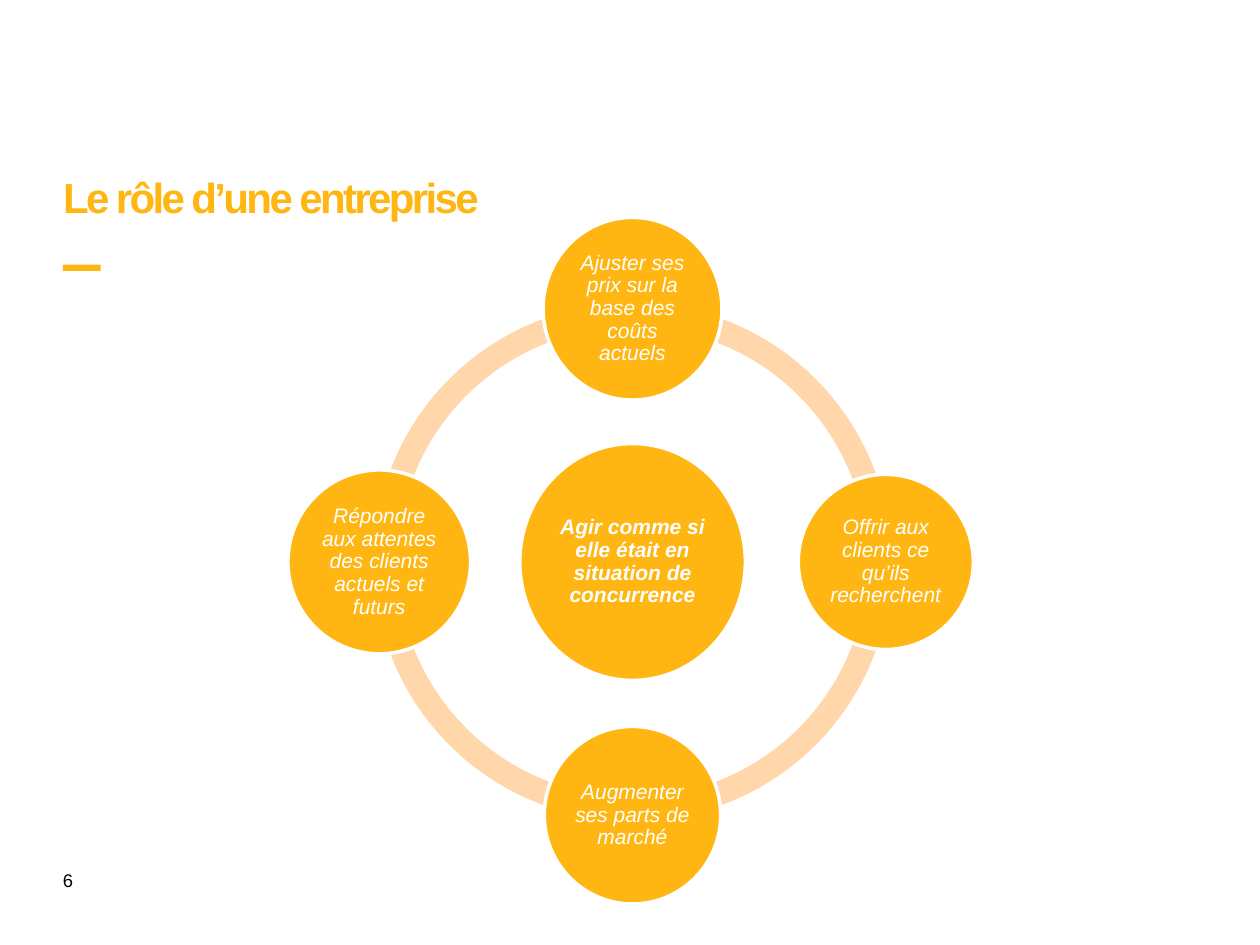
"""Build a slide on the role of a company as a radial cycle."""
from math import cos, radians, sin

from pptx import Presentation
from pptx.dml.color import RGBColor
from pptx.enum.shapes import MSO_SHAPE as Shape
from pptx.enum.text import MSO_ANCHOR as Anchor, MSO_AUTO_SIZE as AutoSize, PP_ALIGN as Align
from pptx.util import Inches, Pt

COLORS = {"gold": "FFB612", "peach": "FFD7AB", "white": "FFFFFF", "black": "000000"}
CENTER_X, CENTER_Y = 5.02, 4.46
ORBIT = 2.01
RING_SIZE = 4.11
GOALS = [
    ("Ajuster ses prix sur la base des coûts actuels", 1.42, 1.45),
    ("Offrir aux clients ce qu’ils recherchent", 1.39, 1.39),
    ("Augmenter ses parts de marché", 1.4, 1.41),
    ("Répondre aux attentes des clients actuels et futurs", 1.45, 1.46),
]


def color(name):
    """Return the named palette color."""
    return RGBColor.from_string(COLORS[name])


def write(shape, text, size=12, ink="white", bold=False, italic=False, spacing=None,
          align=Align.LEFT, line_spacing=None, anchor=Anchor.MIDDLE, inset=(0.02, 0.02)):
    """Put one formatted paragraph in a shape."""
    frame = shape.text_frame
    frame.word_wrap = True
    frame.auto_size = AutoSize.NONE
    frame.vertical_anchor = anchor
    frame.margin_left = frame.margin_right = Inches(inset[0])
    frame.margin_top = frame.margin_bottom = Inches(inset[1])
    para = frame.paragraphs[0]
    para.alignment = align
    para.line_spacing = line_spacing
    span = para.add_run()
    span.text = text
    font = span.font
    font.name, font.size, font.bold, font.italic = "Arial", Pt(size), bold, italic
    font.color.rgb = color(ink)
    if spacing is not None:
        font._element.set("spc", str(round(spacing * 100)))


def add_figure(slide, kind, left, top, width, height, fill):
    """Add a flat preset shape without an outline."""
    shape = slide.shapes.add_shape(kind, Inches(left), Inches(top), Inches(width), Inches(height))
    shape.shadow.inherit = False
    shape.fill.solid()
    shape.fill.fore_color.rgb = color(fill)
    shape.line.fill.background()
    return shape


def add_title(slide, text):
    """Place and fill the title, with its accent bar below."""
    title = slide.shapes.title
    title.left, title.top, title.width, title.height = map(Inches, (0.5, 1.34, 9, 0.44))
    write(title, text, size=24, ink="gold", bold=True, spacing=-1.5, inset=(0, 0.05))
    add_figure(slide, Shape.RECTANGLE, 0.5, 2.1, 0.3, 0.05, "gold")


def add_page_number(slide, number):
    """Add the page number at the lower left."""
    box = slide.shapes.add_textbox(Inches(0.4), Inches(6.85), Inches(0.39), Inches(0.28))
    write(box, number, size=10.5, ink="black", anchor=Anchor.TOP, inset=(0.1, 0.05))


def add_ring(slide):
    """Draw the ring as four quarter arcs."""
    for quarter in range(4):
        arc = add_figure(slide, Shape.BLOCK_ARC, CENTER_X - RING_SIZE / 2,
                         CENTER_Y - RING_SIZE / 2, RING_SIZE, RING_SIZE, "peach")
        arc.adjustments[0] = quarter * 54
        arc.adjustments[1] = (quarter + 1) % 4 * 54
        arc.adjustments[2] = 0.046


def add_bubble(slide, text, x, y, width, height, bold=False):
    """Add a labelled ellipse centred on a point."""
    bubble = add_figure(slide, Shape.OVAL, x - width / 2, y - height / 2, width, height, "gold")
    bubble.line.color.rgb = color("white")
    bubble.line.width = Pt(2)
    write(bubble, text, bold=bold, italic=True, align=Align.CENTER, line_spacing=0.9)


def main():
    """Build and save the deck."""
    deck = Presentation()
    deck.slide_width, deck.slide_height = Inches(10), Inches(7.5)
    slide = deck.slides.add_slide(deck.slide_layouts[5])
    add_page_number(slide, "6")
    add_title(slide, "Le rôle d’une entreprise")
    add_ring(slide)
    add_bubble(slide, "Agir comme si elle était en situation de concurrence",
               CENTER_X, CENTER_Y, 1.79, 1.88, bold=True)
    for index, (text, width, height) in enumerate(GOALS):
        angle = radians(index * 90 - 90)
        add_bubble(slide, text, CENTER_X + ORBIT * cos(angle),
                   CENTER_Y + ORBIT * sin(angle), width, height)
    deck.save("out.pptx")


if __name__ == "__main__":
    main()
